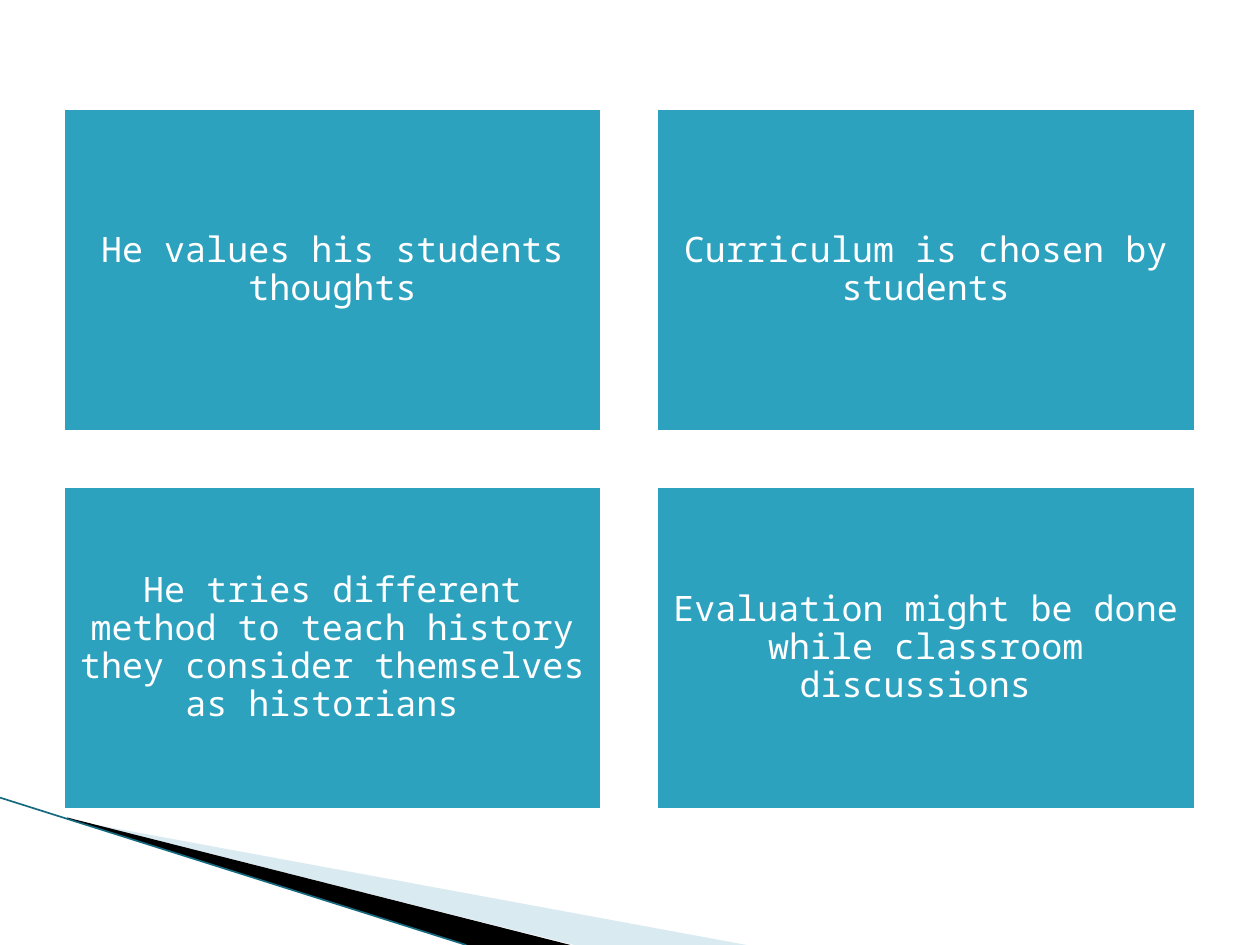
from lxml import etree
from pptx import Presentation
from pptx.dml.color import RGBColor
from pptx.enum.shapes import MSO_CONNECTOR, MSO_SHAPE
from pptx.enum.text import MSO_ANCHOR, PP_ALIGN
from pptx.oxml.ns import qn
from pptx.util import Cm, Pt

RECTANGLE = MSO_SHAPE.RECTANGLE
STRAIGHT = MSO_CONNECTOR.STRAIGHT
MIDDLE = MSO_ANCHOR.MIDDLE
CENTER = PP_ALIGN.CENTER

WHITE = RGBColor(0xFF, 0xFF, 0xFF)
BLACK = RGBColor(0x00, 0x00, 0x00)
TEAL = RGBColor(0x2D, 0xA2, 0xBF)
DARK_TEAL = RGBColor(0x16, 0x6A, 0x80)
PALE_BLUE = RGBColor(0xA0, 0xCB, 0xDC)
FONT = "Noto Sans Mono"

STATEMENTS = [
    "He values his students thoughts",
    "Curriculum is chosen by students",
    "He tries different method to teach history they consider themselves as historians ",
    "Evaluation might be done while classroom discussions ",
]
COLUMNS = 2
LEFT, TOP = 1.27, 2.18
WIDTH, HEIGHT = 10.87, 6.53
GAP = 1.09
INSET = Cm(0.2)

WEDGES = [
    ([(1.4, 16.53), (15.05, 19.05), (11.58, 19.05), (1.4, 16.51)], PALE_BLUE, 40),
    ([(1.35, 16.48), (11.5, 19.05), (9.4, 19.05), (1.37, 16.51)], BLACK, 100),
]
EDGE = [(0, 16.08), (9.4, 19.05)]


def add_wedge(page, points, color, opacity):
    corners = [(Cm(x), Cm(y)) for x, y in points]
    builder = page.shapes.build_freeform(*corners[0])
    builder.add_line_segments(corners[1:], close=True)
    wedge = builder.convert_to_shape()
    wedge.shadow.inherit = False
    wedge.fill.solid()
    wedge.fill.fore_color.rgb = color
    wedge.line.fill.background()
    if opacity < 100:
        paint = wedge.fill._xPr.find(qn("a:solidFill"))[0]
        etree.SubElement(paint, qn("a:alpha"), val=str(opacity * 1000))


def add_edge(page, start, end):
    edge = page.shapes.add_connector(STRAIGHT, *map(Cm, start + end))
    edge.line.color.rgb = DARK_TEAL
    edge.line.width = Pt(0.95)
    etree.SubElement(edge._element.spPr, qn("a:effectLst"))


def add_statement(page, index, text):
    row, column = divmod(index, COLUMNS)
    box = page.shapes.add_shape(
        RECTANGLE,
        Cm(LEFT + column * (WIDTH + GAP)),
        Cm(TOP + row * (HEIGHT + GAP)),
        Cm(WIDTH),
        Cm(HEIGHT),
    )
    box.shadow.inherit = False
    box.fill.solid()
    box.fill.fore_color.rgb = TEAL
    box.line.color.rgb = WHITE
    box.line.width = Pt(2)
    frame = box.text_frame
    frame.word_wrap = True
    frame.vertical_anchor = MIDDLE
    frame.margin_left = frame.margin_right = INSET
    frame.margin_top = frame.margin_bottom = INSET
    para = frame.paragraphs[0]
    para.text = text
    para.alignment = CENTER
    para.line_spacing = 0.9
    para.font.name = FONT
    para.font.size = Pt(20)
    para.font.color.rgb = WHITE


def main():
    deck = Presentation()
    deck.slide_width, deck.slide_height = Cm(25.4), Cm(19.05)
    page = deck.slides.add_slide(deck.slide_layouts[6])
    for points, color, opacity in WEDGES:
        add_wedge(page, points, color, opacity)
    add_edge(page, *EDGE)
    for index, text in enumerate(STATEMENTS):
        add_statement(page, index, text)
    deck.save("out.pptx")


if __name__ == "__main__":
    main()
